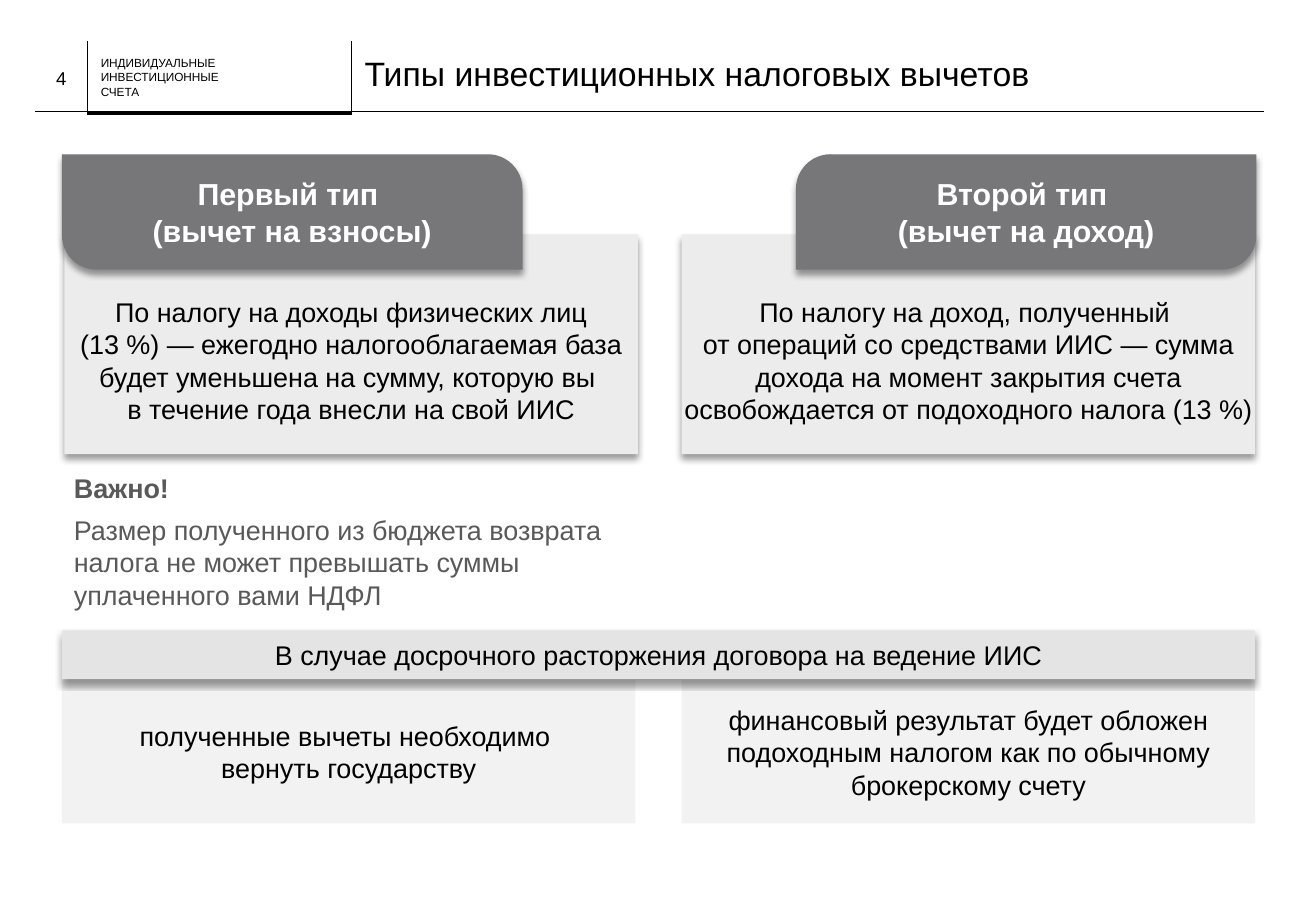
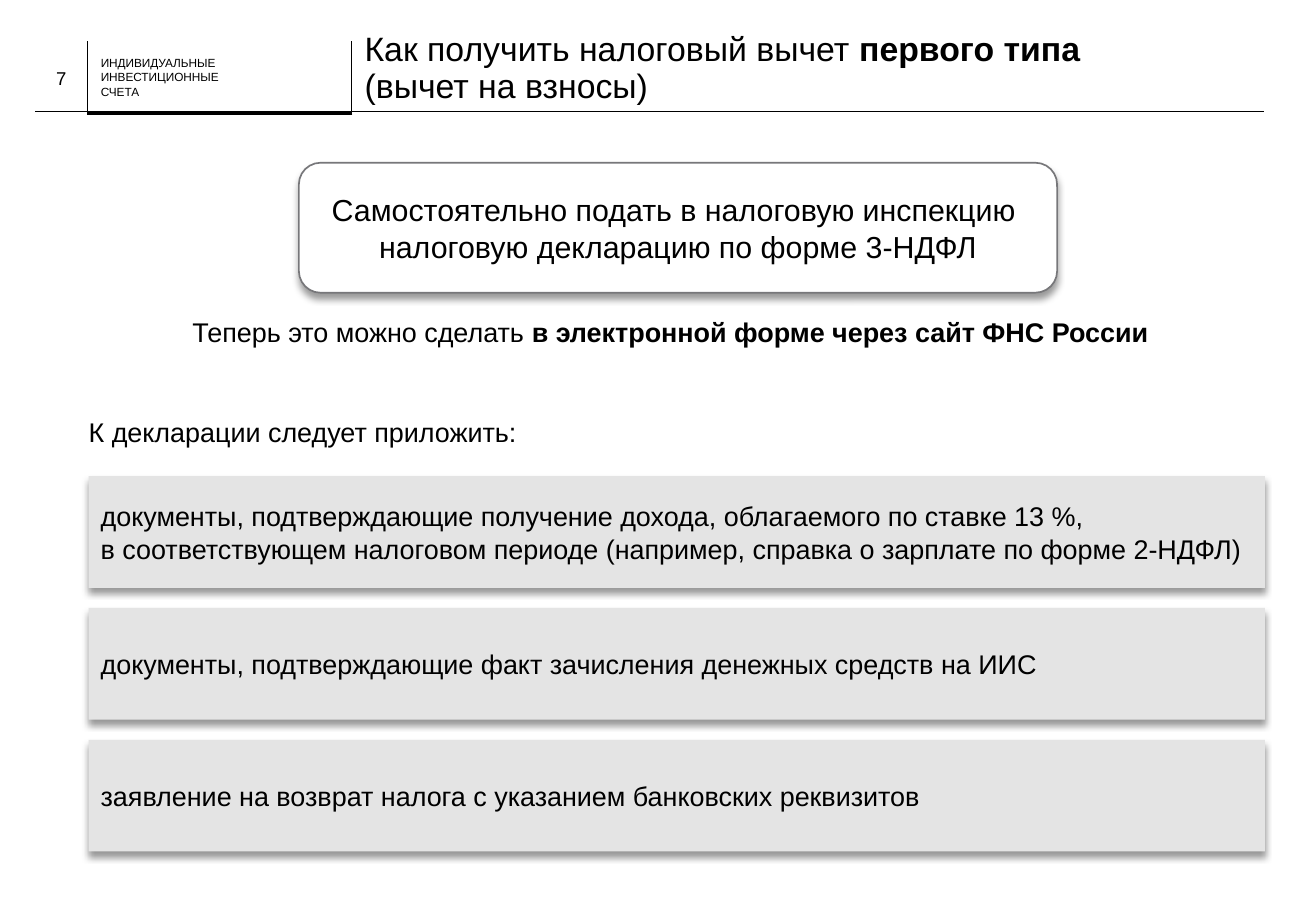
from dataclasses import dataclass

from lxml.etree import SubElement
from pptx import Presentation
from pptx.dml.color import RGBColor
from pptx.enum.shapes import MSO_CONNECTOR, MSO_SHAPE
from pptx.enum.text import MSO_ANCHOR, MSO_AUTO_SIZE, PP_ALIGN
from pptx.oxml.ns import qn
from pptx.util import Inches, Pt


@dataclass(frozen=True)
class Theme:
    font: str = "Arial"
    black: str = "000000"
    white: str = "FFFFFF"
    note: str = "595959"
    tab: str = "77777A"
    card: str = "ECECEC"
    band: str = "E4E4E4"
    result: str = "F2F2F2"
    title_size: float = 20
    head_size: float = 18
    body_size: float = 16
    number_size: float = 11
    label_size: float = 7


T = Theme()
LEFT, CENTER = PP_ALIGN.LEFT, PP_ALIGN.CENTER
MIDDLE, TOP = MSO_ANCHOR.MIDDLE, MSO_ANCHOR.TOP
NO_INSETS = (0, 0, 0, 0)


def write(sp, paragraphs, size=T.body_size, color=T.black, align=LEFT,
          anchor=MIDDLE, insets=(0.1, 0.05, 0.1, 0.05), line_spacing=None):
    """Fill sp with paragraphs; ** switches bold on and off, \\n breaks a line."""
    tf = sp.text_frame
    tf.word_wrap = True
    tf.auto_size = MSO_AUTO_SIZE.NONE
    tf.vertical_anchor = anchor
    tf.margin_left, tf.margin_top, tf.margin_right, tf.margin_bottom = map(Inches, insets)
    for i, text in enumerate(paragraphs):
        p = tf.add_paragraph() if i else tf.paragraphs[0]
        p.alignment = align
        p.line_spacing = line_spacing
        p.space_after = Pt(6 if i < len(paragraphs) - 1 else 0)
        for j, part in enumerate(text.split("**")):
            for n, line in enumerate(part.split("\n")):
                if n:
                    p.add_line_break()
                if line:
                    r = p.add_run()
                    r.text = line
                    r.font.name, r.font.size, r.font.bold = T.font, Pt(size), j % 2 == 1
                    r.font.color.rgb = RGBColor.from_string(color)
        for br in p._p.findall(qn("a:br")):
            SubElement(br, qn("a:rPr"), sz=str(int(size * 100)))


def add_box(s, at, fill, kind=MSO_SHAPE.RECTANGLE, line=None, shadow=True):
    sp = s.shapes.add_shape(kind, *map(Inches, at))
    sp.fill.solid()
    sp.fill.fore_color.rgb = RGBColor.from_string(fill)
    if line:
        sp.line.color.rgb = RGBColor.from_string(line)
        sp.line.width = Pt(1)
    else:
        sp.line.fill.background()
    sp.shadow.inherit = False
    if shadow:
        effects = sp.element.spPr.find(qn("a:effectLst"))
        outer = SubElement(effects, qn("a:outerShdw"), blurRad=str(Pt(4)),
                           dist=str(Pt(3)), dir="5400000", algn="t", rotWithShape="0")
        color = SubElement(outer, qn("a:srgbClr"), val=T.black)
        SubElement(color, qn("a:alpha"), val="40000")
    return sp


prs = Presentation()
prs.slide_width, prs.slide_height = Inches(10.83), Inches(7.5)
layout = prs.slide_layouts[5]

# Slides with their number and title
headers = [
    ("4", "Типы инвестиционных налоговых вычетов", (3, 0.34, 6.77, 0.56)),
    ("7", "Как получить налоговый вычет **первого типа \n**(вычет на взносы)",
     (3, 0.24, 7.41, 0.66)),
]
for number, title, at in headers:
    s = prs.slides.add_slide(layout)
    sp = s.shapes.title
    sp.left, sp.top, sp.width, sp.height = map(Inches, at)
    write(sp, [title], T.title_size, insets=NO_INSETS, line_spacing=0.9)
    sp = s.shapes.add_textbox(*map(Inches, (0.29, 0.44, 0.43, 0.4)))
    write(sp, [number], T.number_size, align=CENTER, insets=NO_INSETS)
types_slide, steps_slide = prs.slides

# Header frame, moved to the layout that both slides share
frame = [
    (0.72, 0.92, 0.29, 0.92, 0.25),
    (2.9, 0.93, 0.72, 0.93, 2.25),
    (10.4, 0.92, 2.88, 0.92, 0.25),
    (0.72, 0.93, 0.72, 0.34, 0.25),
    (2.89, 0.93, 2.89, 0.34, 0.25),
]
for *ends, width in frame:
    rule = types_slide.shapes.add_connector(MSO_CONNECTOR.STRAIGHT, *map(Inches, ends))
    rule.line.color.rgb = RGBColor.from_string(T.black)
    rule.line.width = Pt(width)
    SubElement(rule.element.spPr, qn("a:effectLst"))
    layout.shapes.element.append(rule.element)
label = types_slide.shapes.add_textbox(*map(Inches, (0.83, 0.46, 2.03, 0.35)))
write(label, ["ИНДИВИДУАЛЬНЫЕ\nИНВЕСТИЦИОННЫЕ\nСЧЕТА"], T.label_size, insets=NO_INSETS)
layout.shapes.element.append(label.element)

# Slide 4: two deduction types side by side
s = types_slide
COL_W, TAB_W = 4.72, 3.79
columns = [
    # card left, tab left, result left, card side inset, tab corners, texts
    (0.53, 0.51, 0.51, 0.1, (0, 0.3), "**Первый тип \n(вычет на взносы)**",
     "По налогу на доходы физических лиц\n(13 %) — ежегодно налогооблагаемая база "
     "будет уменьшена на сумму, которую вы \nв течение года внесли на свой ИИС",
     "полученные вычеты необходимо \nвернуть государству"),
    (5.61, 6.55, 5.61, 0, (0.3, 0), "**Второй тип \n(вычет на доход)**",
     "По налогу на доход, полученный \nот операций со средствами ИИС — сумма дохода "
     "на момент закрытия счета освобождается от подоходного налога (13 %)",
     "финансовый результат будет обложен подоходным налогом как по обычному "
     "брокерскому счету"),
]
for card_x, tab_x, result_x, side, corners, name, rule_text, result in columns:
    card = add_box(s, (card_x, 1.93, COL_W, 1.81), T.card)
    write(card, [rule_text], align=CENTER, insets=(side, 0.31, side, 0.05))
    tab = add_box(s, (tab_x, 1.27, TAB_W, 0.95), T.tab, MSO_SHAPE.ROUND_2_DIAG_RECTANGLE)
    tab.adjustments[0], tab.adjustments[1] = corners
    write(tab, [name], T.head_size, T.white, CENTER)
    box = add_box(s, (result_x, 5.6, COL_W, 1.18), T.result, shadow=False)
    write(box, [result], align=CENTER)

note = s.shapes.add_textbox(*map(Inches, (0.51, 3.83, 4.76, 1.26)))
write(note, ["**Важно!**", "Размер полученного из бюджета возврата налога не может "
             "превышать суммы уплаченного вами НДФЛ"], color=T.note, anchor=TOP)
band = add_box(s, (0.51, 5.19, 9.82, 0.4), T.band)
write(band, ["В случае досрочного расторжения договора на ведение ИИС"], align=CENTER)

# Slide 7: the declaration and its attachments
s = steps_slide
step = add_box(s, (2.46, 1.34, 6.24, 1.07), T.white, MSO_SHAPE.ROUNDED_RECTANGLE, T.tab)
write(step, ["Самостоятельно подать в налоговую инспекцию \n"
             "налоговую декларацию по форме 3-НДФЛ"], T.head_size, align=CENTER)
online = s.shapes.add_textbox(*map(Inches, (1, 2.55, 9.1, 0.37)))
write(online, ["Теперь это можно сделать **в электронной форме через сайт ФНС России **"],
      align=CENTER, anchor=TOP)
intro = s.shapes.add_textbox(*map(Inches, (0.73, 3.42, 8.75, 0.35)))
write(intro, ["К декларации следует приложить:"], anchor=TOP, insets=NO_INSETS)

attachments = [
    "документы, подтверждающие получение дохода, облагаемого по ставке 13 %, \n"
    "в соответствующем налоговом периоде (например, справка о зарплате по форме 2-НДФЛ)",
    "документы, подтверждающие факт зачисления денежных средств на ИИС",
    "заявление на возврат налога с указанием банковских реквизитов",
]
for i, text in enumerate(attachments):
    write(add_box(s, (0.73, 3.92 + 1.085 * i, 9.68, 0.92), T.band), [text])

prs.save("out.pptx")
